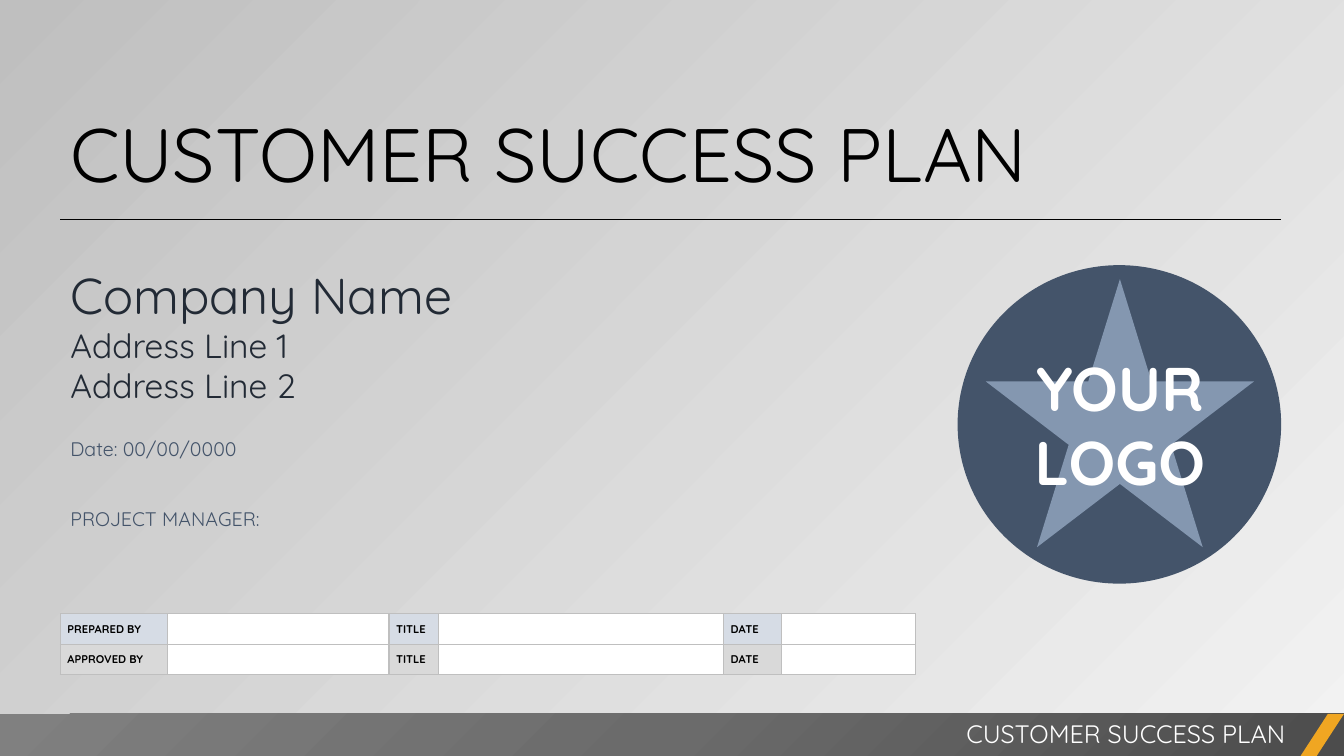
from copy import deepcopy
from dataclasses import dataclass

from lxml.etree import SubElement as Sub
from pptx import Presentation
from pptx.dml.color import RGBColor as RGB
from pptx.enum.shapes import MSO_CONNECTOR as Conn, MSO_SHAPE as Shape
from pptx.enum.text import MSO_ANCHOR as Anchor, PP_ALIGN as Align
from pptx.oxml.ns import qn
from pptx.util import Pt


@dataclass(frozen=True)
class Theme:
    """Colours, font and type sizes of the slide."""
    font: str = "Quicksand"
    black: str = "000000"
    white: str = "FFFFFF"
    ink: str = "222A35"
    slate: str = "44546A"
    steel: str = "8497B0"
    ice: str = "D6DCE5"
    ash: str = "D9D9D9"
    rule: str = "BFBFBF"
    amber: str = "F0A622"
    back: tuple = ((0, "F2F2F2"), (1, "BFBFBF"))
    bar: tuple = ((0, "4C4C4C"), (0.5, "6B6B6B"), (1, "808080"))
    title: int = 54
    logo: int = 44
    name: int = 36
    lines: int = 24
    foot: int = 18
    note: int = 14
    cell: int = 8


T = Theme()


def style(para, size, color, bold=False):
    """Set the font of a whole paragraph."""
    font = para.font
    font.name, font.size, font.bold = T.font, Pt(size), bold
    font.color.rgb = RGB.from_string(color)


def add_text(shapes, box, rows, align=Align.LEFT, bold=False):
    """Add a text box; each row is text, size, colour and space before."""
    frame = shapes.add_textbox(*map(Pt, box)).text_frame
    frame.word_wrap = True
    for i, (text, size, color, gap) in enumerate(rows):
        para = frame.add_paragraph() if i else frame.paragraphs[0]
        para.text, para.alignment, para.space_before = text, align, Pt(gap)
        style(para, size, color, bold)


def add_form(shapes, kind, box, color):
    """Add a flat preset shape without outline."""
    form = shapes.add_shape(kind, *map(Pt, box))
    form.shadow.inherit = False
    form.fill.solid()
    form.fill.fore_color.rgb = RGB.from_string(color)
    form.line.fill.background()
    return form


def add_line(shapes, start, end, color, width):
    """Add a straight line."""
    line = shapes.add_connector(Conn.STRAIGHT, *map(Pt, start + end))
    line.line.color.rgb = RGB.from_string(color)
    line.line.width = Pt(width)
    Sub(line._element.spPr, qn("a:effectLst"))


def shade(fill, stops):
    """Give the stops of a gradient fill their places and colours."""
    for stop, (place, color) in zip(fill.gradient_stops, stops):
        stop.position = place
        stop.color.rgb = RGB.from_string(color)


def add_bar(shapes, box):
    """Add the footer bar, shaded outward from its lower right corner."""
    bar = add_form(shapes, Shape.RECTANGLE, box, T.black)
    bar.fill.gradient()
    grad = bar._element.spPr.find(qn("a:gradFill"))
    stops = grad.find(qn("a:gsLst"))
    stops.append(deepcopy(stops[0]))
    shade(bar.fill, T.bar)
    grad.remove(grad.find(qn("a:lin")))
    ring = Sub(grad, qn("a:path"), path="circle")
    Sub(ring, qn("a:fillToRect"), l="100000", t="100000")


def edge(cell, color, width):
    """Draw the four borders of a cell."""
    props = cell._tc.get_or_add_tcPr()
    for i, side in enumerate(("lnL", "lnR", "lnT", "lnB")):
        line = props.makeelement(qn(f"a:{side}"), {"w": str(Pt(width))})
        Sub(Sub(line, qn("a:solidFill")), qn("a:srgbClr"), val=color)
        props.insert(i, line)


def add_table(shapes, left, top, widths, height, rows):
    """Add the sign-off table; each row is a label colour and its labels."""
    table = shapes.add_table(len(rows), len(widths), Pt(left), Pt(top),
                             Pt(sum(widths)), Pt(height * len(rows))).table
    for col, width in zip(table.columns, widths):
        col.width = Pt(width)
    for r, (tint, labels) in enumerate(rows):
        table.rows[r].height = Pt(height)
        for c in range(len(widths)):
            cell = table.cell(r, c)
            cell.margin_left = cell.margin_right = Pt(5)
            cell.margin_top = cell.margin_bottom = 0
            cell.vertical_anchor = Anchor.MIDDLE
            cell.fill.solid()
            cell.fill.fore_color.rgb = RGB.from_string(T.white if c % 2 else tint)
            edge(cell, T.rule, 1)
            para = cell.text_frame.paragraphs[0]
            if c % 2:
                Sub(para._p, qn("a:endParaRPr"), sz=str(T.cell * 100))
            else:
                para.text, para.line_spacing = labels[c // 2], 1.07
                style(para, T.cell, T.black, True)


def add_badge(shapes):
    """Add the round placeholder for a logo as a group."""
    group = shapes.add_group_shape().shapes
    add_form(group, Shape.OVAL, (684, 189.4, 231.1, 227.5), T.slate)
    add_form(group, Shape.STAR_5_POINT, (704.2, 199.4, 191.5, 191.5), T.steel)
    add_text(group, (704.2, 246.2, 191.5, 113.8),
             [(word, T.logo, T.white, 0) for word in ("YOUR", "LOGO")],
             Align.CENTER, True)


def main():
    """Build the cover slide and save it."""
    deck = Presentation()
    deck.slide_width, deck.slide_height = Pt(960), Pt(540)
    slide = deck.slides.add_slide(deck.slide_layouts[6])
    fill = slide.background.fill
    fill.gradient()
    fill.gradient_angle = 135
    shade(fill, T.back)

    shapes = slide.shapes
    head = "CUSTOMER SUCCESS PLAN"
    add_text(shapes, (43.2, 72.7, 883.4, 72.7), [(head, T.title, T.black, 0)])
    add_text(shapes, (43.2, 185, 640.8, 200.9), [
        ("Company Name", T.name, T.ink, 0),
        ("Address Line 1", T.lines, T.ink, 0),
        ("Address Line 2", T.lines, T.ink, 0),
        ("Date: 00/00/0000", T.note, T.slate, 23),
        ("PROJECT MANAGER:", T.note, T.slate, 33)])
    add_line(shapes, (43.2, 157), (915.1, 157), T.black, 0.5)
    add_badge(shapes)
    add_table(shapes, 43.2, 438.5, (76.3, 158.4, 35.3, 203.8, 41, 95.8), 21.6, [
        (T.ice, ("PREPARED BY", "TITLE", "DATE")),
        (T.ash, ("APPROVED BY", "TITLE", "DATE"))])
    add_bar(shapes, (0, 510, 960, 30))
    slash = add_form(shapes, Shape.PARALLELOGRAM, (929, 510, 31, 30), T.amber)
    slash.adjustments[0] = 0.65
    add_text(shapes, (378, 509.8, 547.2, 28.8), [(head, T.foot, T.white, 0)],
             Align.RIGHT)
    deck.save("out.pptx")


if __name__ == "__main__":
    main()
